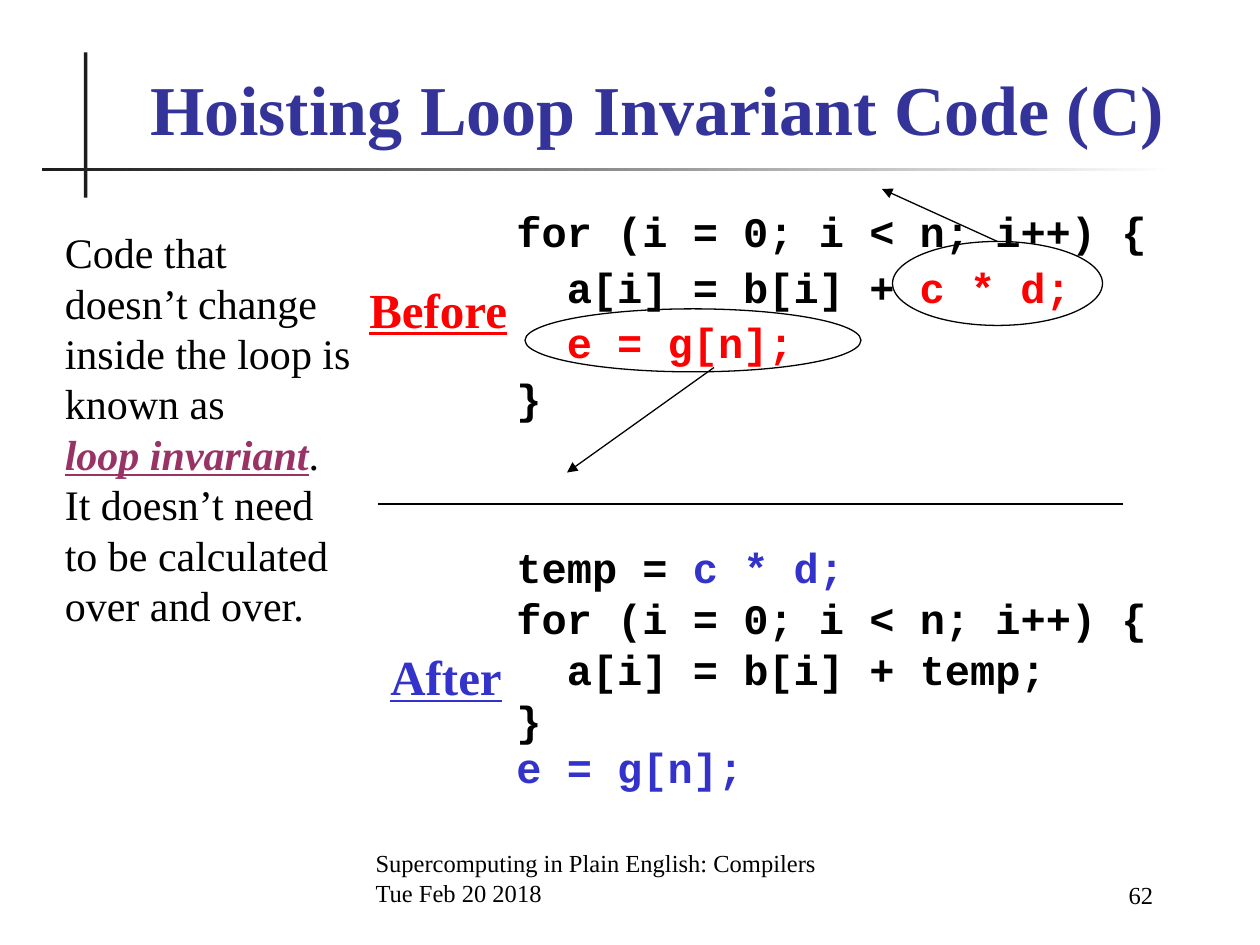
import pptx
import pptx.util
import pptx.dml.color
import pptx.enum.shapes
import pptx.enum.text
import pptx.oxml
from dataclasses import dataclass

Pt = pptx.util.Pt
RGB = pptx.dml.color.RGBColor.from_string
Shape = pptx.enum.shapes.MSO_SHAPE
Align = pptx.enum.text.PP_ALIGN
Anchor = pptx.enum.text.MSO_ANCHOR


@dataclass(frozen=True)
class Theme:
    serif: str = "Times New Roman"
    mono: str = "Courier New"
    ink: str = "000000"
    bar: str = "1C1C1C"
    fade: str = "FFFFFF"
    head: str = "333399"
    red: str = "FF0000"
    blue: str = "3333CC"
    plum: str = "993366"
    title: int = 40
    label: int = 28
    body: int = 24
    foot: int = 14
    gap: int = 6
    line: float = 0.75


theme = Theme()


# Basic parts
def add_run(para, text, size, color=theme.ink, font=theme.serif,
            bold=False, slant=False, under=False):
    run = para.add_run()
    run.text = text
    face = run.font
    face.name, face.size = font, Pt(size)
    face.color.rgb = RGB(color)
    face.bold, face.italic, face.underline = bold, slant, under


def add_box(slide, x, y, w, h, anchor=Anchor.TOP, wrap=True):
    frame = slide.shapes.add_textbox(Pt(x), Pt(y), Pt(w), Pt(h)).text_frame
    frame.word_wrap = wrap
    frame.vertical_anchor = anchor
    return frame


def add_form(slide, kind, x, y, w, h):
    form = slide.shapes.add_shape(kind, Pt(x), Pt(y), Pt(w), Pt(h))
    form.shadow.inherit = False
    return form


def add_line(slide, x1, y1, x2, y2, arrow=False):
    line = slide.shapes.add_connector(
        pptx.enum.shapes.MSO_CONNECTOR.STRAIGHT, Pt(x1), Pt(y1), Pt(x2), Pt(y2))
    line.line.color.rgb = RGB(theme.ink)
    line.line.width = Pt(theme.line)
    if arrow:
        tail = pptx.oxml.parse_xml(
            '<a:tailEnd xmlns:a="http://schemas.openxmlformats.org/drawingml/2006/main"'
            ' type="triangle"/>')
        line.line._get_or_add_ln().append(tail)
    line._element.spPr.append(pptx.oxml.parse_xml(
        '<a:effectLst xmlns:a="http://schemas.openxmlformats.org/drawingml/2006/main"/>'))


# Title with its crossed bars
def add_head(slide, x, y, w, h):
    post = add_form(slide, Shape.RECTANGLE, x + 24, y, 2, 83)
    post.fill.solid()
    post.fill.fore_color.rgb = RGB(theme.bar)
    beam = add_form(slide, Shape.RECTANGLE, x, y + 66, 648, 2)
    beam.fill.gradient()
    beam.fill.gradient_angle = 0
    for stop, color in zip(beam.fill.gradient_stops, (theme.bar, theme.fade)):
        stop.color.rgb = RGB(color)
    for bar in (post, beam):
        bar.line.fill.background()

    title = slide.shapes.title
    title.left, title.top = Pt(x + 36), Pt(y + 6)
    title.width, title.height = Pt(w - 36), Pt(h - 6)
    frame = title.text_frame
    frame.vertical_anchor = Anchor.BOTTOM
    frame.auto_size = pptx.enum.text.MSO_AUTO_SIZE.NONE
    para = frame.paragraphs[0]
    para.alignment = Align.CENTER
    add_run(para, "Hoisting Loop Invariant Code (C)", theme.title, theme.head, bold=True)


# Text at the left
def add_note(slide, x, y, w, h):
    para = add_box(slide, x, y, w, h).paragraphs[0]
    add_run(para, "Code that doesn’t change inside the loop is known as", theme.body)
    para.add_line_break()
    add_run(para, "loop invariant", theme.body, theme.plum,
            bold=True, slant=True, under=True)
    add_run(para, ".", theme.body)
    para.add_line_break()
    add_run(para, "It doesn’t need to be calculated over and over.", theme.body)


# One label and its code; each row is line spacing, then text and colour pairs
def add_code(slide, x, y, w, h, name, color, dx, dy, rows):
    frame = add_box(slide, x + 84, y, w - 84, h)
    frame.margin_top = Pt(3.6 + theme.gap)
    for i, (space, *parts) in enumerate(rows):
        para = frame.add_paragraph() if i else frame.paragraphs[0]
        para.line_spacing = space
        if i:
            para.space_before = Pt(theme.gap)
        for text, tint in parts:
            add_run(para, text, theme.body, tint, theme.mono, bold=True)
    label = add_box(slide, x + dx, y + dy, 94, 41, wrap=False)
    add_run(label.paragraphs[0], name, theme.label, color, bold=True, under=True)


# Rings round the loop invariants, with arrows out of the loop
def add_marks(slide, x, y):
    for dx, dy, w, h in ((306, 30, 120, 48), (96, 68.5, 192, 36)):
        ring = add_form(slide, Shape.OVAL, x + dx, y + dy, w, h)
        ring.fill.background()
        ring.line.color.rgb = RGB(theme.ink)
        ring.line.width = Pt(theme.line)
    for x1, y1, x2, y2 in ((366, 30, 300, 0), (204, 102, 120, 162)):
        add_line(slide, x + x1, y + y1, x + x2, y + y2, arrow=True)


# Footer and page number
def add_foot(slide, x, y, w, h):
    frame = add_box(slide, x, y, 315, h, Anchor.BOTTOM)
    add_run(frame.paragraphs[0], "Supercomputing in Plain English: Compilers", theme.foot)
    add_run(frame.add_paragraph(), "Tue Feb 20 2018", theme.foot)
    page = add_box(slide, x + w - 102, y + 1.5, 102, h, Anchor.BOTTOM).paragraphs[0]
    page.alignment = Align.RIGHT
    add_run(page, "62", theme.foot)


def main():
    deck = pptx.Presentation()
    deck.slide_width, deck.slide_height = Pt(720), Pt(540)
    slide = deck.slides.add_slide(deck.slide_layouts.get_by_name("Title Only"))
    ink, red, blue = theme.ink, theme.red, theme.blue
    loop = "for (i = 0; i < n; i++) {"
    before = [
        (1, (loop, ink)),
        (0.9, ("  a[i] = b[i] + ", ink), ("c * d;", red)),
        (0.9, ("  e = g[n];", red)),
        (0.9, ("}", ink)),
    ]
    after = [
        (1, ("temp = ", ink), ("c * d;", blue)),
        (0.8, (loop, ink)),
        (0.8, ("  a[i] = b[i] + temp;", ink)),
        (0.8, ("}", ink)),
        (0.7, ("e = g[n];", blue)),
    ]
    add_head(slide, 24, 30, 667, 59)
    add_code(slide, 204, 108, 474, 192, "Before", red, 0, 48, before)
    add_code(slide, 204, 300, 468, 186, "After", blue, 12, 66, after)
    add_marks(slide, 204, 108)
    add_note(slide, 30, 126, 180, 238)
    add_line(slide, 216, 288, 642, 288)
    add_foot(slide, 207.5, 486, 458.5, 36)
    deck.save("out.pptx")


if __name__ == "__main__":
    main()
